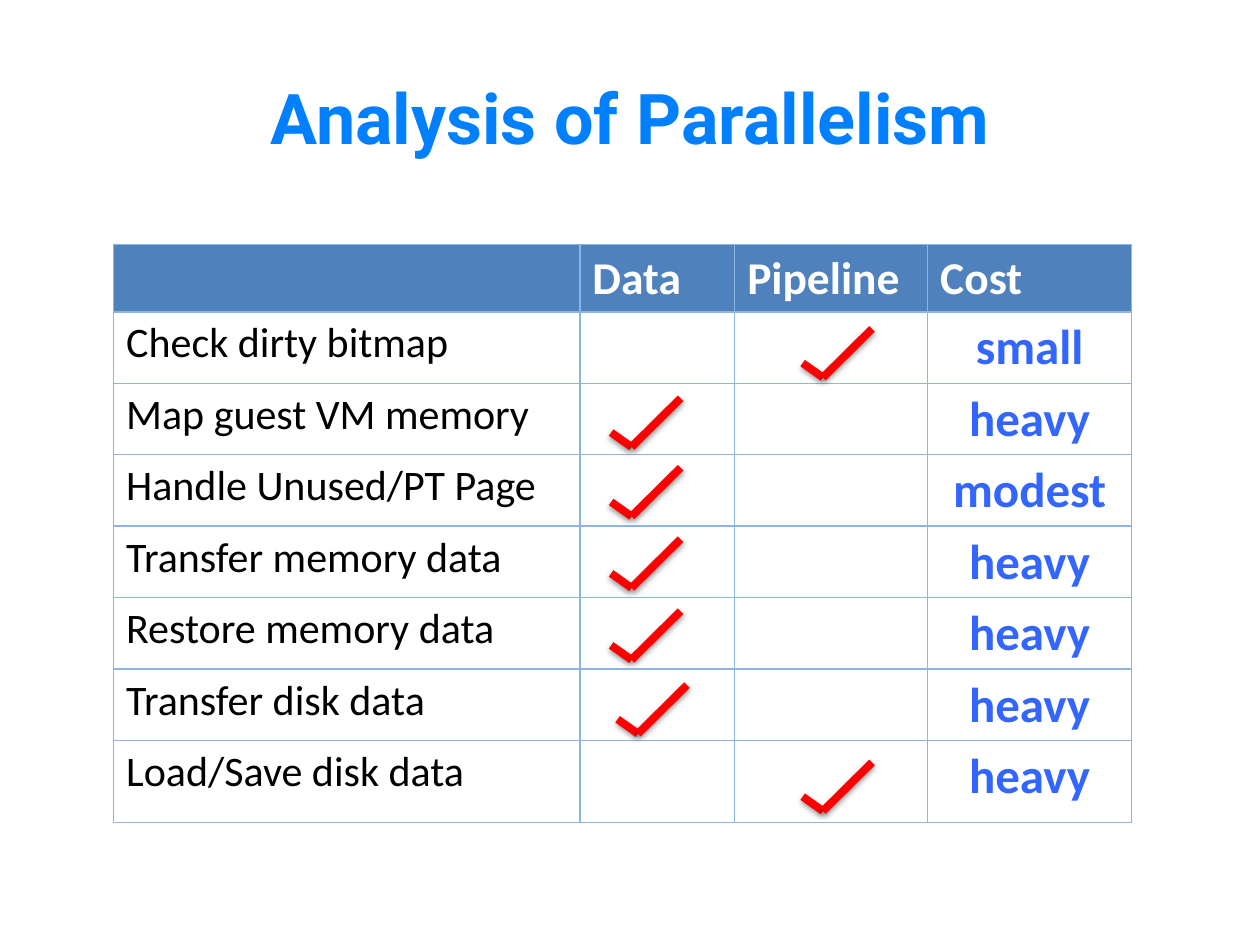
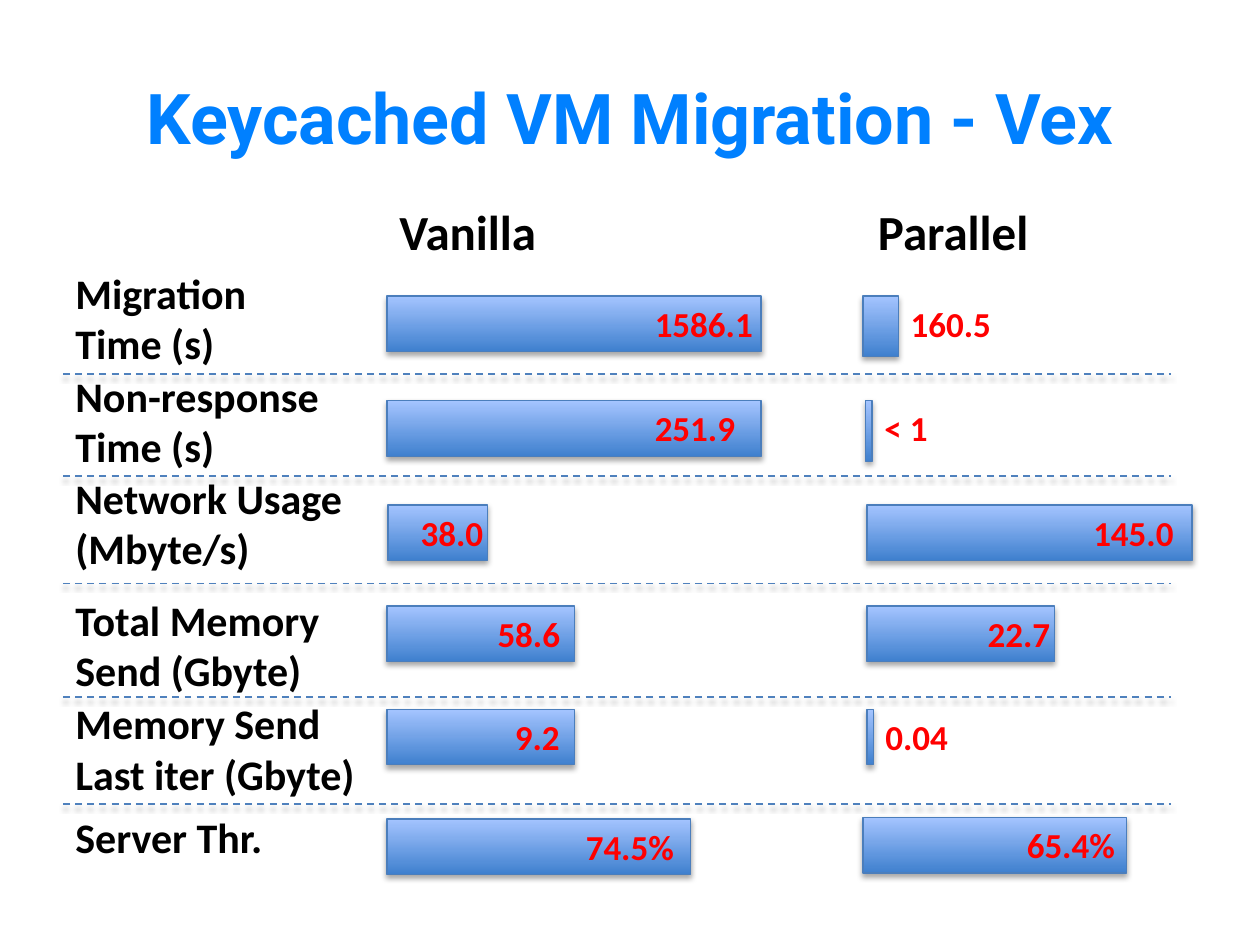
from lxml import etree
from pptx import Presentation
from pptx.dml.color import RGBColor
from pptx.enum import dml, shapes, text
from pptx.oxml import ns
from pptx.util import Cm, Pt

TITLE_BLUE = RGBColor(0x00, 0x80, 0xFF)
HEADER_BLUE = RGBColor(0x4F, 0x81, 0xBD)
GRID_BLUE = RGBColor(0x8E, 0xB4, 0xE3)
COST_BLUE = RGBColor(0x33, 0x66, 0xFF)
BAR_DARK = RGBColor(0x3F, 0x80, 0xCE)
BAR_LIGHT = RGBColor(0xA4, 0xC4, 0xFF)
BAR_EDGE = RGBColor(0x4B, 0x7E, 0xBC)
WHITE = RGBColor(0xFF, 0xFF, 0xFF)
BLACK = RGBColor(0x00, 0x00, 0x00)
RED = RGBColor(0xFF, 0x00, 0x00)

HEADINGS = ["", "Data", "Pipeline", "Cost"]
COLUMN_WIDTHS = [9.4, 3.12, 3.89, 4.11]
ROW_HEIGHTS = [1.17] + [1.24] * 6 + [1.65]
DATA_X, PIPELINE_X = 12.32, 16.18

STEPS = [
    ("Check dirty bitmap", "small", PIPELINE_X, 6.63),
    ("Map guest VM memory", "heavy", DATA_X, 8.03),
    ("Handle Unused/PT Page", "modest", DATA_X, 9.43),
    ("Transfer memory data", "heavy", DATA_X, 10.87),
    ("Restore memory data", "heavy", DATA_X, 12.32),
    ("Transfer disk data", "heavy", DATA_X + 0.13, 13.81),
    ("Load/Save disk data", "heavy", PIPELINE_X, 15.37),
]

SYSTEMS = [("Vanilla", 7.8), ("Parallel", 17.45)]

METRICS = [
    ("Migration Time (s)", 5.26, 5.56),
    ("Non-response Time (s)", 7.34, 5.56),
    ("Network Usage\n(Mbyte/s)", 9.4, 6.6),
    ("Total Memory Send (Gbyte)", 11.86, 5.56),
    ("Memory Send Last iter (Gbyte)", 13.94, 6.38),
    ("Server Thr.", 16.23, 5.92),
]

SEPARATORS = [7.54, 9.6, 11.76, 14.05, 16.21]

BARS = [
    ("1586.1", 7.8, 5.97, 7.54, 1.12, 12.95, 2.54),
    ("160.5", 17.4, 5.97, 0.71, 1.22, 18.11, 2.9),
    ("251.9", 7.8, 8.08, 7.54, 1.12, 12.95, 2.54),
    ("< 1", 17.45, 8.08, 0.13, 1.22, 17.58, 2.46),
    ("38.0", 7.82, 10.18, 2.01, 1.12, 8.23, 1.8),
    ("145.0", 17.48, 10.18, 6.55, 1.12, 21.79, 2.24),
    ("58.6", 7.8, 12.22, 3.78, 1.12, 9.78, 1.8),
    ("22.7", 17.48, 12.22, 3.78, 1.12, 19.66, 1.8),
    ("9.2", 7.8, 14.3, 3.78, 1.12, 10.13, 1.42),
    ("0.04", 17.48, 14.3, 0.13, 1.12, 17.6, 1.78),
    ("74.5%", 7.8, 16.51, 6.12, 1.12, 11.56, 3.73),
    ("65.4%", 17.4, 16.48, 5.31, 1.12, 20.45, 2.31),
]


class Deck:
    body_font = "Calibri"
    title_font = "Roboto"

    def __init__(self):
        self.prs = Presentation()
        self.prs.slide_width = Cm(25.4)
        self.prs.slide_height = Cm(19.05)
        self.slide = None

    def new_slide(self, title, left, width):
        self.slide = self.prs.slides.add_slide(self.prs.slide_layouts[6])
        self.label(title, left, 0.76, width, 3.18, 40, TITLE_BLUE, font=self.title_font,
                   align=text.PP_ALIGN.CENTER, anchor=text.MSO_ANCHOR.MIDDLE)

    def style(self, frame, size, color, bold=True, font=None, align=text.PP_ALIGN.LEFT):
        for paragraph in frame.paragraphs:
            paragraph.alignment = align
            for run in paragraph.runs:
                run.font.name = font or self.body_font
                run.font.size = Pt(size)
                run.font.bold = bold
                run.font.color.rgb = color

    def label(self, words, left, top, width, height, size, color, parent=None, wrap=True,
              anchor=text.MSO_ANCHOR.TOP, **look):
        box = (parent or self.slide).shapes.add_textbox(Cm(left), Cm(top), Cm(width), Cm(height))
        frame = box.text_frame
        frame.word_wrap = wrap
        frame.vertical_anchor = anchor
        frame.text = words
        self.style(frame, size, color, **look)

    def shade(self, shape, distance, opacity):
        effects = etree.SubElement(shape.element.spPr, ns.qn("a:effectLst"))
        shadow = etree.SubElement(effects, ns.qn("a:outerShdw"), blurRad="40000",
                                  dist=str(distance), dir="5400000", rotWithShape="0")
        color = etree.SubElement(shadow, ns.qn("a:srgbClr"), val=str(BLACK))
        etree.SubElement(color, ns.qn("a:alpha"), val=str(opacity * 1000))

    def line(self, x1, y1, x2, y2, color, width, dash=None, parent=None):
        stroke = (parent or self.slide).shapes.add_connector(
            shapes.MSO_CONNECTOR.STRAIGHT, Cm(x1), Cm(y1), Cm(x2), Cm(y2))
        stroke.line.color.rgb = color
        stroke.line.width = Pt(width)
        if dash:
            stroke.line.dash_style = dash
        self.shade(stroke, 20000, 38)

    def tick(self, left, top):
        group = self.slide.shapes.add_group_shape()
        corner = left + 0.41, top + 0.98
        self.line(left, top + 0.69, *corner, RED, 4.5, parent=group)
        self.line(left + 1.4, top, *corner, RED, 4.5, parent=group)

    def bar(self, value, left, top, width, height, value_left, value_width):
        group = self.slide.shapes.add_group_shape()
        block = group.shapes.add_shape(shapes.MSO_SHAPE.RECTANGLE,
                                       Cm(left), Cm(top), Cm(width), Cm(height))
        block.fill.gradient()
        block.fill.gradient_angle = 90
        for stop, color in zip(block.fill.gradient_stops, (BAR_DARK, BAR_LIGHT)):
            stop.color.rgb = color
        block.line.color.rgb = BAR_EDGE
        block.line.width = Pt(0.75)
        self.shade(block, 23000, 35)
        self.label(value, value_left, top, value_width, 1.12, 20, RED, parent=group, wrap=False)

    def border(self, cell):
        properties = cell._tc.get_or_add_tcPr()
        for index, side in enumerate(("a:lnL", "a:lnR", "a:lnT", "a:lnB")):
            edge = etree.Element(ns.qn(side), w=str(Pt(1)))
            fill = etree.SubElement(edge, ns.qn("a:solidFill"))
            etree.SubElement(fill, ns.qn("a:srgbClr"), val=str(GRID_BLUE))
            properties.insert(index, edge)

    def table(self, rows, left, top, column_widths, row_heights):
        grid = self.slide.shapes.add_table(
            len(rows), len(column_widths), Cm(left), Cm(top),
            Cm(sum(column_widths)), Cm(sum(row_heights))).table
        grid.horz_banding = False
        for column, width in zip(grid.columns, column_widths):
            column.width = Cm(width)
        for r, (words, height) in enumerate(zip(rows, row_heights)):
            grid.rows[r].height = Cm(height)
            for c, word in enumerate(words):
                cell = grid.cell(r, c)
                if word:
                    cell.text_frame.text = word
                if r == 0:
                    cell.fill.solid()
                    cell.fill.fore_color.rgb = HEADER_BLUE
                    self.style(cell.text_frame, 26, WHITE)
                else:
                    cell.fill.background()
                    if c == 0:
                        self.style(cell.text_frame, 24, BLACK, bold=False)
                    else:
                        self.style(cell.text_frame, 28, COST_BLUE, align=text.PP_ALIGN.CENTER)
                self.border(cell)


def parallelism(deck):
    deck.new_slide("Analysis of Parallelism", 1.27, 22.86)
    rows = [HEADINGS] + [[task, "", "", cost] for task, cost, _, _ in STEPS]
    deck.table(rows, 2.29, 4.93, COLUMN_WIDTHS, ROW_HEIGHTS)
    for _, _, left, top in STEPS:
        deck.tick(left, top)


def migration(deck):
    deck.new_slide("Keycached VM Migration - Vex", 0, 25.4)
    for system, left in SYSTEMS:
        deck.label(system, left, 3.94, 5.56, 1.45, 28, BLACK)
    for metric, top, width in METRICS:
        deck.label(metric, 1.27, top, width, 2.31 if top < 16 else 1.27, 24, BLACK)
    for bar in BARS:
        deck.bar(*bar)
    for y in SEPARATORS:
        deck.line(1.27, y, 23.6, y, HEADER_BLUE, 1, dml.MSO_LINE.DASH)


def main():
    deck = Deck()
    parallelism(deck)
    migration(deck)
    deck.prs.save("out.pptx")


if __name__ == "__main__":
    main()
